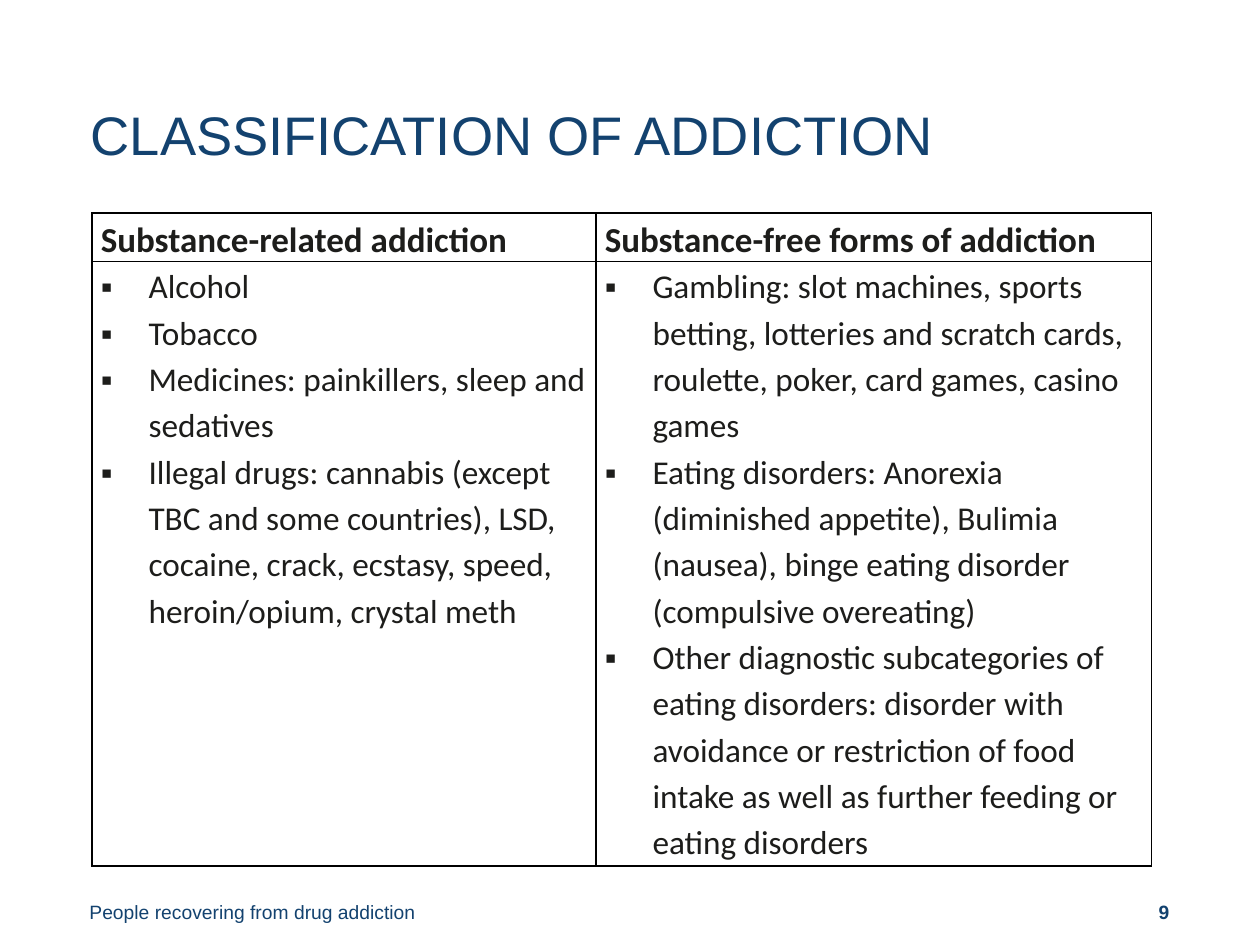
from lxml import etree
from pptx import Presentation
from pptx.dml.color import RGBColor
from pptx.enum.text import MSO_ANCHOR, PP_ALIGN
from pptx.oxml.ns import qn
from pptx.util import Inches, Pt

TOP, BOTTOM = MSO_ANCHOR.TOP, MSO_ANCHOR.BOTTOM
LEFT, RIGHT = PP_ALIGN.LEFT, PP_ALIGN.RIGHT
NAVY, INK, BLACK = "13426F", "1D1D1B", "000000"
TITLE_ONLY = 5

COLUMNS = [
    ("Substance-related addiction", 4, [
        "Alcohol",
        "Tobacco",
        "Medicines: painkillers, sleep and sedatives",
        "Illegal drugs: cannabis (except TBC and some countries), LSD, cocaine, "
        "crack, ecstasy, speed, heroin/opium, crystal meth",
    ]),
    ("Substance-free forms of addiction", 4.41, [
        "Gambling: slot machines, sports betting, lotteries and scratch cards, "
        "roulette, poker, card games, casino games",
        "Eating disorders: Anorexia (diminished appetite), Bulimia (nausea), "
        "binge eating disorder (compulsive overeating)",
        "Other diagnostic subcategories of eating disorders: disorder with "
        "avoidance or restriction of food intake as well as further feeding or "
        "eating disorders",
    ]),
]


def style_font(font, name, size, color, bold=False):
    """Set the typeface, size, colour and weight of a font."""
    font.name, font.size, font.bold = name, Pt(size), bold
    font.color.rgb = RGBColor.from_string(color)


def set_margins(target, left, top, right, bottom):
    """Set the inner margins of a text frame or table cell in inches."""
    target.margin_left, target.margin_top = Inches(left), Inches(top)
    target.margin_right, target.margin_bottom = Inches(right), Inches(bottom)


def fill_line(frame, text, size, spacing, anchor, align=LEFT, bold=False):
    """Write one navy line of text into a text frame."""
    frame.word_wrap = True
    frame.vertical_anchor = anchor
    paragraph = frame.paragraphs[0]
    paragraph.text = text
    paragraph.alignment = align
    paragraph.line_spacing = Pt(spacing)
    style_font(paragraph.font, "Arial", size, NAVY, bold)


def add_title(slide, left, top, width, height):
    """Place the title placeholder."""
    title = slide.shapes.title
    title.left, title.top = Inches(left), Inches(top)
    title.width, title.height = Inches(width), Inches(height)
    set_margins(title.text_frame, 0, 0.05, 0.1, 0.05)
    fill_line(title.text_frame, "CLASSIFICATION OF ADDICTION", 31, 34, TOP)


def add_footer(slide, left, top, width, height):
    """Add the footer text at the left and the page number at the right."""
    parts = [
        ("People recovering from drug addiction", left, 3.38, 0.71, 0, LEFT, False),
        ("9", left + width - 2.25, 2.25, 0, 0.71, RIGHT, True),
    ]
    for text, x, box_width, inset_left, inset_right, align, bold in parts:
        box = slide.shapes.add_textbox(
            Inches(x), Inches(top), Inches(box_width), Inches(height))
        set_margins(box.text_frame, inset_left, 0.05, inset_right, 0.16)
        fill_line(box.text_frame, text, 11, 13.3, BOTTOM, align, bold)


def add_borders(cell):
    """Draw a thin black line on each side of a cell."""
    properties = cell._tc.get_or_add_tcPr()
    for index, side in enumerate(("lnL", "lnR", "lnT", "lnB")):
        line = etree.Element(qn(f"a:{side}"), w=str(Pt(1)))
        fill = etree.SubElement(line, qn("a:solidFill"))
        etree.SubElement(fill, qn("a:srgbClr"), val=BLACK)
        properties.insert(index, line)


def add_bullet(paragraph):
    """Give a paragraph a small square bullet with a hanging indent."""
    properties = paragraph._p.get_or_add_pPr()
    properties.set("marL", str(Inches(0.38)))
    properties.set("indent", str(-Inches(0.38)))
    etree.SubElement(properties, qn("a:buFont"), typeface="Arial")
    etree.SubElement(properties, qn("a:buChar"), char="▪")


def fill_cell(cell, lines, size, bold=False, bulleted=False):
    """Write the paragraphs of a cell and format it."""
    cell.fill.background()
    add_borders(cell)
    set_margins(cell, 0.07, 0, 0.07, 0)
    frame = cell.text_frame
    frame.text = "\n".join(lines)
    for paragraph in frame.paragraphs:
        if bulleted:
            add_bullet(paragraph)
        paragraph.line_spacing = 1.15
        style_font(paragraph.font, "Calibri", size, INK, bold)


def add_addiction_table(slide, left, top, width, height):
    """Add the table that sets the two forms of addiction side by side."""
    header_height = 0.38
    table = slide.shapes.add_table(
        2, len(COLUMNS), Inches(left), Inches(top), Inches(width), Inches(height)).table
    table.rows[0].height = Inches(header_height)
    table.rows[1].height = Inches(height - header_height)
    for index, (heading, column_width, items) in enumerate(COLUMNS):
        table.columns[index].width = Inches(column_width)
        fill_cell(table.cell(0, index), [heading], 20, bold=True)
        fill_cell(table.cell(1, index), items, 19, bulleted=True)


def main():
    """Build and save the presentation."""
    presentation = Presentation()
    presentation.slide_width, presentation.slide_height = Inches(10), Inches(7.5)
    slide = presentation.slides.add_slide(presentation.slide_layouts[TITLE_ONLY])
    add_footer(slide, 0, 6.89, 9.99, 0.6)
    add_title(slide, 0.72, 0.8, 8.55, 1.12)
    add_addiction_table(slide, 0.73, 1.69, 8.41, 5.18)
    presentation.save("out.pptx")


if __name__ == "__main__":
    main()
